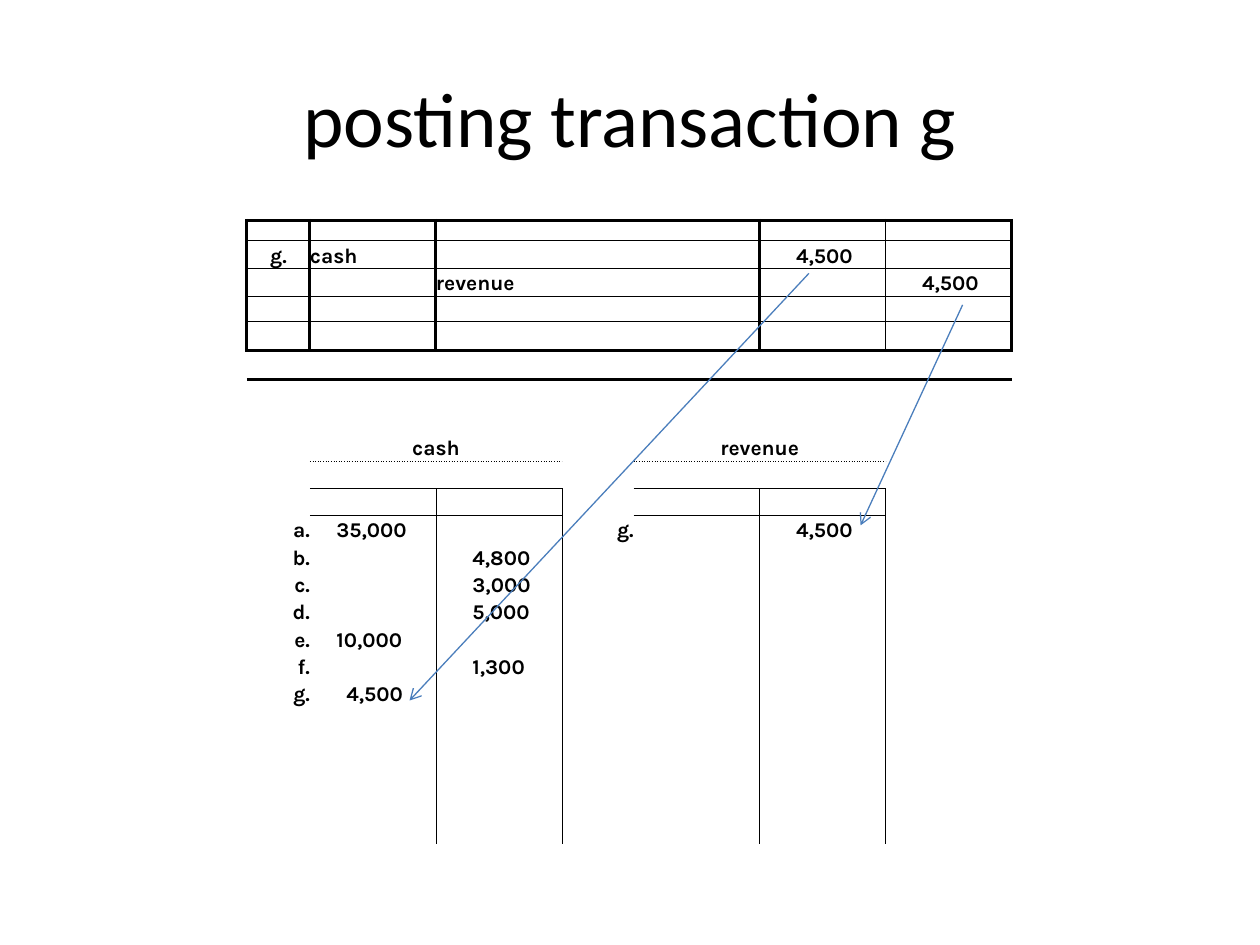
"""Build the slide that posts transaction g from the journal to the T accounts."""
from dataclasses import dataclass

from pptx import Presentation
from pptx.dml.color import RGBColor
from pptx.enum.shapes import MSO_CONNECTOR
from pptx.enum.text import MSO_ANCHOR, PP_ALIGN
from pptx.oxml.xmlchemy import OxmlElement
from pptx.slide import Slide
from pptx.util import Inches, Pt

LEFT, CENTER, RIGHT = PP_ALIGN.LEFT, PP_ALIGN.CENTER, PP_ALIGN.RIGHT
MIDDLE, BOTTOM = MSO_ANCHOR.MIDDLE, MSO_ANCHOR.BOTTOM
STRAIGHT = MSO_CONNECTOR.STRAIGHT
PLAIN_TABLE = "{2D5ABB26-0587-4C30-8999-92F81FD0307C}"

COLUMN_WIDTHS = [0.5, 1, 1, 0.57, 1, 1, 1]
LEDGER_HEIGHT = 19.8
JOURNAL_HEIGHTS = [0.64, 0.88, 0.88, 0.8, 0.92, 0.92]
ACCOUNT_ROWS = 17
JOURNAL_END = 5
HEADING_ROW = 8
FIRST_ENTRY_ROW = 11
LAST_ROW = len(JOURNAL_HEIGHTS) + ACCOUNT_ROWS
ACCOUNTS = {"cash": 1, "revenue": 4}
POSTINGS = [
    ("a.", 1, "35,000"),
    ("b.", 2, "4,800"),
    ("c.", 2, "3,000"),
    ("d.", 2, "5,000"),
    ("e.", 1, "10,000"),
    ("f.", 2, "1,300"),
    ("g.", 1, "4,500"),
]
THICK, THIN = 2, 0.5


def rgb(value):
    """Turn a hex string into a colour."""
    return RGBColor.from_string(value)


def write(frame, text, *, font, size, color, bold=False, align=LEFT):
    """Put formatted text into a text frame."""
    paragraph = frame.paragraphs[0]
    paragraph.alignment = align
    run = paragraph.add_run()
    run.text = text
    run.font.name, run.font.size, run.font.bold = font, Pt(size), bold
    run.font.color.rgb = rgb(color)


def add_child(parent, tag, **attributes):
    """Append an XML element with attributes and return it."""
    child = OxmlElement(tag)
    for name, value in attributes.items():
        child.set(name, str(value))
    parent.append(child)
    return child


@dataclass
class Sheet:
    """Style and current slide, measured in columns and rows of a grid."""

    slide: Slide
    column: float = 1
    row: float = 0.25
    ink: str = "000000"
    accent: str = "4B7EBC"
    title_font: str = "Calibri"
    body_font: str = "Karla"
    title_size: int = 44
    body_size: int = 12

    def x(self, columns):
        """Convert grid columns to a length."""
        return Inches(columns * self.column)

    def y(self, rows):
        """Convert grid rows to a length."""
        return Inches(rows * self.row)

    def title(self, text, left, top, width, height):
        """Place and fill the title placeholder."""
        title = self.slide.shapes.title
        title.left, title.top = self.x(left), self.y(top)
        title.width, title.height = self.x(width), self.y(height)
        title.text_frame.vertical_anchor = MIDDLE
        write(title.text_frame, text, font=self.title_font,
              size=self.title_size, color=self.ink, align=CENTER)

    def table(self, left, top, widths, heights):
        """Add an unstyled table with compact empty cells."""
        table = self.slide.shapes.add_table(
            len(heights), len(widths), self.x(left), self.y(top),
            self.x(sum(widths)), self.y(sum(heights))).table
        table.first_row = table.horz_banding = False
        table._tbl.tblPr[0].text = PLAIN_TABLE
        for column, width in zip(table.columns, widths):
            column.width = self.x(width)
        for row, height in zip(table.rows, heights):
            row.height = self.y(height)
        for cell in table.iter_cells():
            cell.margin_left = cell.margin_right = 0
            cell.margin_top = cell.margin_bottom = 0
            cell.vertical_anchor = BOTTOM
            add_child(cell.text_frame.paragraphs[0]._p, "a:endParaRPr", sz=800)
        return table

    def entry(self, cell, text, align=LEFT):
        """Write bold ledger text into a cell."""
        paragraph = cell.text_frame.paragraphs[0]._p
        for end_mark in paragraph.findall(
                "{http://schemas.openxmlformats.org/drawingml/2006/main}endParaRPr"):
            paragraph.remove(end_mark)
        write(cell.text_frame, text, font=self.body_font, size=self.body_size,
              color=self.ink, bold=True, align=align)

    def amount(self, cell, text):
        """Write an amount, indented by its number of digits."""
        cell.margin_left = self.x(0.21 if len(text) > 5 else 0.29)
        self.entry(cell, text)

    def borders(self, table, horizontal, vertical):
        """Draw cell edges from maps of grid edges to width and dash."""
        for row in range(len(table.rows)):
            for column in range(len(table.columns)):
                cell = table.cell(row, column)
                properties = cell._tc.get_or_add_tcPr()
                edges = {
                    "a:lnL": vertical.get((row, column)),
                    "a:lnR": vertical.get((row, column + 1)),
                    "a:lnT": horizontal.get((row, column)),
                    "a:lnB": horizontal.get((row + 1, column)),
                }
                for tag, edge in edges.items():
                    if edge:
                        width, dash = edge
                        line = add_child(properties, tag, w=Pt(width))
                        fill = add_child(line, "a:solidFill")
                        add_child(fill, "a:srgbClr", val=self.ink)
                        add_child(line, "a:prstDash", val=dash)
                cell.fill.background()

    def arrow(self, start, end):
        """Draw a thin arrow between two grid points."""
        arrow = self.slide.shapes.add_connector(
            STRAIGHT, self.x(start[0]), self.y(start[1]),
            self.x(end[0]), self.y(end[1]))
        arrow.line.color.rgb = rgb(self.accent)
        arrow.line.width = Pt(0.75)
        add_child(arrow.line._get_or_add_ln(), "a:tailEnd", type="arrow")
        add_child(arrow._element.spPr, "a:effectLst")


def ledger_edges():
    """Return the horizontal and vertical edges of journal and accounts."""
    horizontal, vertical = {}, {}
    for row in range(JOURNAL_END + 1):
        width = THICK if row in (0, JOURNAL_END) else THIN
        for column in range(len(COLUMN_WIDTHS)):
            horizontal[row, column] = width, "solid"
    for row in range(JOURNAL_END):
        for column in (0, 1, 5, 6, 7):
            vertical[row, column] = THIN if column == 6 else THICK, "solid"
    for debit in ACCOUNTS.values():
        for column in (debit, debit + 1):
            horizontal[HEADING_ROW + 1, column] = THIN, "sysDot"
            horizontal[HEADING_ROW + 2, column] = THIN, "solid"
        for row in range(HEADING_ROW + 2, LAST_ROW):
            vertical[row, debit + 1] = THIN, "solid"
    return horizontal, vertical


def main():
    """Build and save the slide."""
    deck = Presentation()
    deck.slide_width, deck.slide_height = Inches(10), Inches(7.5)
    sheet = Sheet(deck.slides.add_slide(deck.slide_layouts[5]))
    sheet.title("posting transaction g", 0.5, 1.2, 9, 5)

    account_height = (LEDGER_HEIGHT - sum(JOURNAL_HEIGHTS)) / ACCOUNT_ROWS
    ledger = sheet.table(1.96, 7, COLUMN_WIDTHS,
                         JOURNAL_HEIGHTS + [account_height] * ACCOUNT_ROWS)
    sheet.entry(ledger.cell(1, 0), "g.", CENTER)
    sheet.entry(ledger.cell(1, 1), "cash")
    sheet.amount(ledger.cell(1, 5), "4,500")
    sheet.entry(ledger.cell(2, 2), "revenue")
    sheet.amount(ledger.cell(2, 6), "4,500")

    for account, debit in ACCOUNTS.items():
        heading = ledger.cell(HEADING_ROW, debit)
        heading.merge(ledger.cell(HEADING_ROW, debit + 1))
        sheet.entry(heading, account, CENTER)
    for row, (label, side, value) in enumerate(POSTINGS, FIRST_ENTRY_ROW):
        sheet.entry(ledger.cell(row, 0), label, RIGHT)
        sheet.amount(ledger.cell(row, side), value)
    sheet.entry(ledger.cell(FIRST_ENTRY_ROW, 3), "g.", RIGHT)
    sheet.amount(ledger.cell(FIRST_ENTRY_ROW, 5), "4,500")
    sheet.borders(ledger, *ledger_edges())

    sheet.arrow((6.42, 8.68), (3.25, 22.24))
    sheet.arrow((7.64, 9.68), (6.83, 16.68))
    deck.save("out.pptx")


if __name__ == "__main__":
    main()
